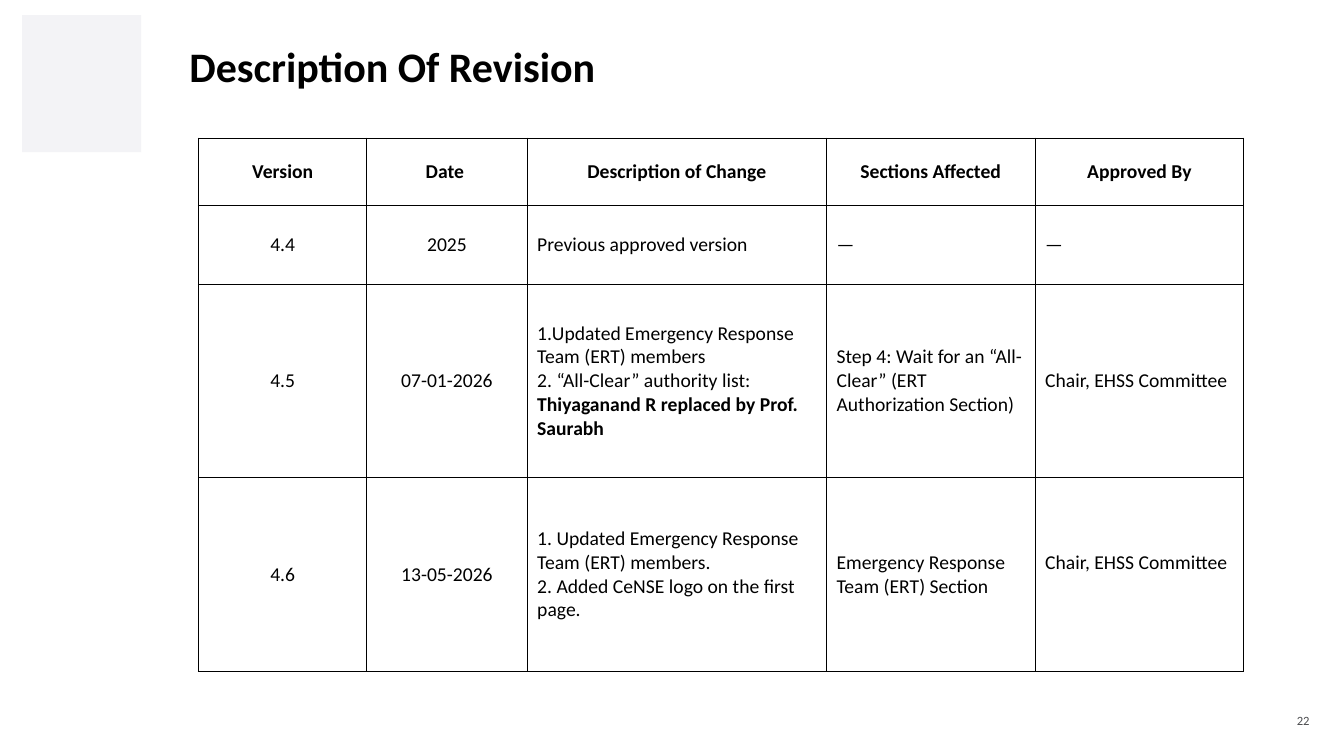
from dataclasses import dataclass

from lxml.etree import SubElement
from pptx import Presentation
from pptx.dml.color import RGBColor
from pptx.enum.shapes import MSO_SHAPE as Shape
from pptx.enum.text import MSO_ANCHOR as Anchor, PP_ALIGN as Align
from pptx.oxml.ns import qn
from pptx.util import Inches, Pt


@dataclass(frozen=True)
class Theme:
    """Colours, font and type sizes of the slide."""
    font: str = "Calibri"
    ink: str = "000000"
    paper: str = "FFFFFF"
    panel: str = "F3F3F6"
    muted: str = "4C4D4F"
    title_size: int = 30
    table_size: int = 14
    number_size: int = 9
    rule: int = 1


THEME = Theme()
GRID_STEP = 0.1
SLIDE_COLUMNS, SLIDE_ROWS = 133.33, 75

VERSION_COLUMNS = [16.7, 15.9, 29.7, 20.7, 20.7]
VERSION_ROWS = [6.7, 7.8, 19.2, 19.2]
CENTRED_COLUMNS = 2
HEADINGS = ["Version", "Date ", "Description of Change", "Sections Affected", "Approved By"]
REVISIONS = [
    ["4.4", "2025", "Previous approved version", "—", "—"],
    ["4.5", "07-01-2026",
     ["1.Updated Emergency Response Team (ERT) members",
      [("2. “All-Clear” authority list: ", False),
       ("Thiyaganand R replaced by Prof. Saurabh", True)]],
     "Step 4: Wait for an “All-Clear” (ERT Authorization Section)",
     "Chair, EHSS Committee"],
    ["4.6", "13-05-2026",
     ["1. Updated Emergency Response Team (ERT) members.",
      "2. Added CeNSE logo on the first page."],
     "Emergency Response Team (ERT) Section",
     "Chair, EHSS Committee"],
]


def grid(steps):
    """Convert grid steps to a length."""
    return Inches(steps * GRID_STEP)


def colour(code):
    """Convert a hex code to a colour."""
    return RGBColor.from_string(code)


def write(frame, content, *, size, ink=THEME.ink, bold=False, align=Align.LEFT):
    """Fill a text frame with paragraphs of plain or mixed-weight text."""
    frame.word_wrap = True
    paragraphs = [content] if isinstance(content, str) else content
    for index, wording in enumerate(paragraphs):
        paragraph = frame.add_paragraph() if index else frame.paragraphs[0]
        paragraph.alignment = align
        runs = [(wording, bold)] if isinstance(wording, str) else wording
        for words, weight in runs:
            run = paragraph.add_run()
            run.text = words
            run.font.name = THEME.font
            run.font.size = Pt(size)
            run.font.bold = weight
            run.font.color.rgb = colour(ink)


def add_label(slide, content, place, **style):
    """Add a vertically centred text box."""
    frame = slide.shapes.add_textbox(*map(grid, place)).text_frame
    frame.vertical_anchor = Anchor.MIDDLE
    write(frame, content, **style)


def add_panel(slide, place):
    """Add the pale corner panel."""
    panel = slide.shapes.add_shape(Shape.RECTANGLE, *map(grid, place))
    panel.shadow.inherit = False
    panel.fill.solid()
    panel.fill.fore_color.rgb = colour(THEME.panel)
    panel.line.fill.background()


def rule_cell(cell):
    """Draw a thin rule on every side of a cell."""
    properties = cell._tc.get_or_add_tcPr()
    for side in ("a:lnL", "a:lnR", "a:lnT", "a:lnB"):
        line = SubElement(properties, qn(side), w=str(Pt(THEME.rule)))
        fill = SubElement(line, qn("a:solidFill"))
        SubElement(fill, qn("a:srgbClr"), val=THEME.ink)


def add_revision_table(slide, left, top):
    """Add the table of revisions with its heading row."""
    place = (left, top, sum(VERSION_COLUMNS), sum(VERSION_ROWS))
    table = slide.shapes.add_table(
        len(VERSION_ROWS), len(VERSION_COLUMNS), *map(grid, place)).table
    table.horz_banding = False
    for column, width in zip(table.columns, VERSION_COLUMNS):
        column.width = grid(width)
    for row, height in zip(table.rows, VERSION_ROWS):
        row.height = grid(height)
    for row_index, entries in enumerate([HEADINGS, *REVISIONS]):
        heading = row_index == 0
        for column_index, entry in enumerate(entries):
            cell = table.cell(row_index, column_index)
            rule_cell(cell)
            cell.fill.solid()
            cell.fill.fore_color.rgb = colour(THEME.paper)
            cell.vertical_anchor = Anchor.MIDDLE
            centred = heading or column_index < CENTRED_COLUMNS
            write(cell.text_frame, entry, size=THEME.table_size, bold=heading,
                  align=Align.CENTER if centred else Align.LEFT)
    latest_approval = table.cell(len(REVISIONS), len(HEADINGS) - 1)
    latest_approval.margin_bottom = grid(2.9)


def main():
    """Build and save the revision slide."""
    deck = Presentation()
    deck.slide_width, deck.slide_height = grid(SLIDE_COLUMNS), grid(SLIDE_ROWS)
    slide = deck.slides.add_slide(deck.slide_layouts[6])
    add_panel(slide, (2.2, 1.5, 11.8, 13.6))
    add_label(slide, "Description Of Revision", (17.8, 1.5, 113, 10.1),
              size=THEME.title_size, bold=True)
    add_revision_table(slide, 19.7, 13.7)
    add_label(slide, "22", (116.3, 69.5, 14.6, 4),
              size=THEME.number_size, ink=THEME.muted, align=Align.RIGHT)
    deck.save("out.pptx")


if __name__ == "__main__":
    main()
